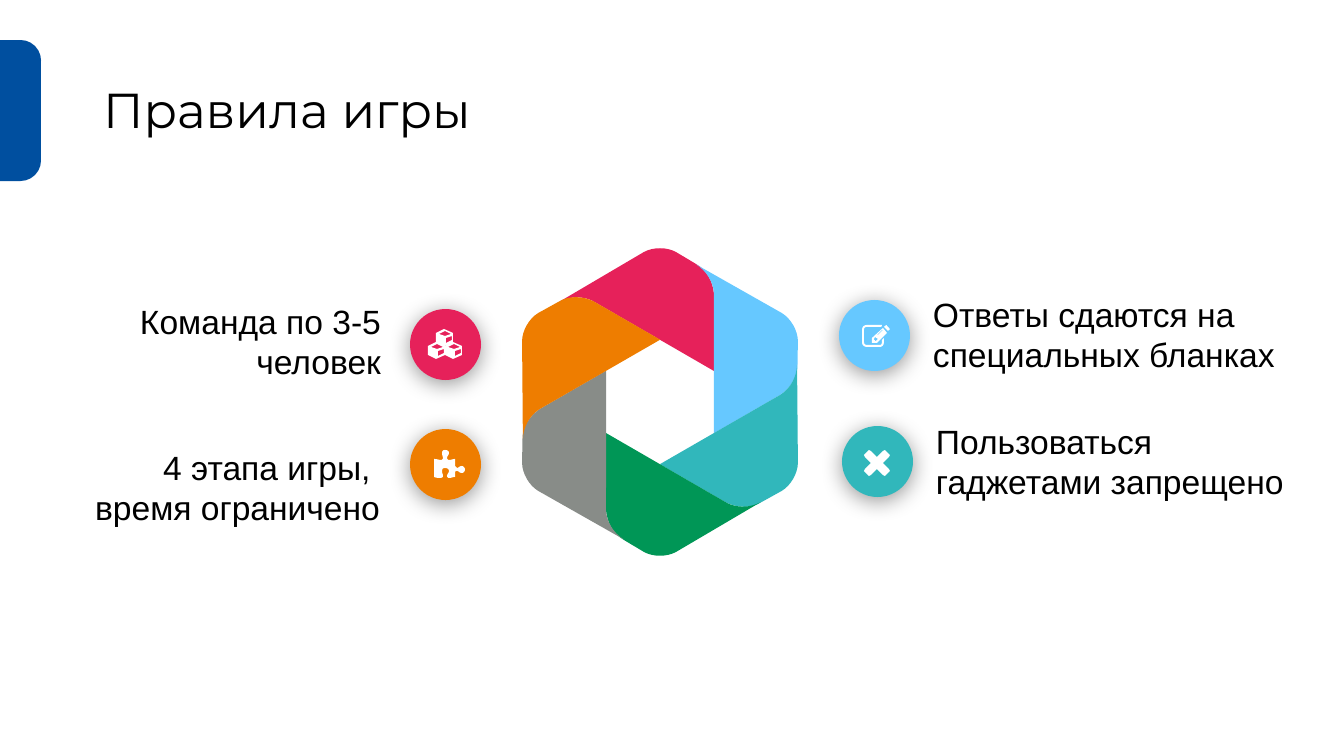
"""Builds the game rules slide: a hexagon of six blades between four rules with icons."""
from math import cos, radians, sin

from lxml import etree
from pptx import Presentation
from pptx.dml.color import RGBColor
from pptx.enum.shapes import MSO_SHAPE as Preset
from pptx.enum.text import MSO_ANCHOR as Anchor, MSO_AUTO_SIZE as AutoSize, PP_ALIGN as Align
from pptx.oxml import parse_xml
from pptx.oxml.ns import nsdecls
from pptx.util import Pt

PX = 9071
THEME = {
    "black": "000000", "white": "FFFFFF", "blue": "004F9F",
    "pink": "E6215A", "sky": "66C8FF", "teal": "31B7BB",
    "green": "009656", "gray": "888C88", "orange": "EE7D00",
    "title_font": "Montserrat", "body_font": "Arial",
    "title_size": 35, "body_size": 24,
}


def paint(shape, color):
    """Gives a shape a plain fill without line or shadow."""
    shape.shadow.inherit = False
    shape.fill.solid()
    shape.fill.fore_color.rgb = RGBColor.from_string(THEME[color])
    shape.line.fill.background()


def draw_outline(shapes, contours, color):
    """Draws contours whose steps are points (2 numbers) or Bezier curves (6 numbers)."""
    builder = None
    for start, *steps in contours:
        points = [start]
        for step in steps:
            if len(step) == 2:
                points.append(step)
                continue
            nodes = [points[-1], step[:2], step[2:4], step[4:]]
            for t in [n / 8 for n in range(1, 9)]:
                weights = [(1 - t) ** 3, 3 * t * (1 - t) ** 2, 3 * t * t * (1 - t), t ** 3]
                points.append(tuple(sum(w * node[axis] for w, node in zip(weights, nodes))
                                    for axis in (0, 1)))
        points = [(round(x * PX), round(y * PX)) for x, y in points]
        if builder is None:
            builder = shapes.build_freeform(*points[0], scale=1.0)
        else:
            builder.move_to(*points[0])
        builder.add_line_segments(points[1:], close=True)
    paint(builder.convert_to_shape(), color)


presentation = Presentation()
presentation.slide_width, presentation.slide_height = 1344 * PX, 756 * PX
slide = presentation.slides.add_slide(presentation.slide_layouts[5])

accent_bar = slide.shapes.add_shape(Preset.ROUND_2_SAME_RECTANGLE, -50 * PX, 90 * PX, 141 * PX, 41 * PX)
accent_bar.adjustments[0] = 0.5
accent_bar.adjustments[1] = 0
accent_bar.rotation = 90
paint(accent_bar, "blue")

title = slide.shapes.title
title.left, title.top, title.width, title.height = 93 * PX, 40 * PX, 1159 * PX, 146 * PX
title.text_frame.text = "Правила игры"
title.text_frame.vertical_anchor = Anchor.MIDDLE
title.text_frame.auto_size = AutoSize.NONE
heading = title.text_frame.paragraphs[0]
heading.alignment = Align.LEFT
heading.line_spacing = 0.9
heading.runs[0].font.name = THEME["title_font"]
heading.runs[0].font.size = Pt(THEME["title_size"])
heading.runs[0].font.color.rgb = RGBColor.from_string(THEME["black"])

RULES = [
    ("Команда по 3-5 человек", (7, 301, 374), Align.RIGHT, (410, 309), "pink"),
    ("4 этапа игры, \nвремя ограничено", (55, 447, 325), Align.RIGHT, (410, 429), "orange"),
    ("Ответы сдаются на специальных бланках", (933, 294, 356), Align.LEFT, (839, 300), "sky"),
    ("Пользоваться гаджетами запрещено", (936, 421, 354), Align.LEFT, (842, 426), "teal"),
]
for words, (left, top, width), alignment, (circle_left, circle_top), color in RULES:
    box = slide.shapes.add_textbox(left * PX, top * PX, width * PX, 82 * PX)
    frame = box.text_frame
    frame.word_wrap = True
    frame.auto_size = AutoSize.SHAPE_TO_FIT_TEXT
    frame.margin_left = frame.margin_right = frame.margin_top = frame.margin_bottom = 0
    frame.text = words
    for paragraph in frame.paragraphs:
        paragraph.alignment = alignment
        for run in paragraph.runs:
            run.font.name = THEME["body_font"]
            run.font.size = Pt(THEME["body_size"])
            run.font.color.rgb = RGBColor.from_string(THEME["black"])
    circle = slide.shapes.add_shape(Preset.OVAL, circle_left * PX, circle_top * PX, 71 * PX, 71 * PX)
    paint(circle, color)
    effects = circle.element.spPr.find("{*}effectLst")
    effects.append(parse_xml(
        f'<a:outerShdw {nsdecls("a")} blurRad="{Pt(16)}" dist="{Pt(3)}" dir="5400000" '
        f'algn="t" rotWithShape="0"><a:srgbClr val="{THEME["black"]}">'
        '<a:alpha val="40000"/></a:srgbClr></a:outerShdw>'))

CUBE = [
    [(8, 0), (17, 4), (17, 13), (8, 17), (0, 13), (0, 4)],
    [(3, 5), (9, 2), (15, 5), (9, 7)],
    [(10, 9), (16, 7), (16, 11), (10, 14)],
]
cubes = [[(left + x, top + y) for x, y in face]
         for left, top in [(428, 342), (445, 342), (436, 329)] for face in CUBE]

puzzle = [[
    (462, 473), (459, 473, 459, 471, 457, 471), (455, 471, 455, 472, 455, 473), (455, 477),
    (453, 477, 451, 478, 449, 478), (448, 478, 447, 477, 447, 476),
    (447, 474, 449, 473, 449, 471), (449, 469, 447, 468, 445, 468),
    (443, 468, 442, 469, 442, 471), (442, 473, 443, 475, 443, 475),
    (443, 477), (441, 478), (438, 478, 437, 478, 434, 477), (434, 459),
    (437, 459, 439, 460, 441, 460), (442, 460, 443, 459, 443, 458),
    (443, 457, 442, 455, 442, 453), (442, 451, 443, 450, 445, 450),
    (447, 450, 449, 451, 449, 453), (449, 455, 447, 456, 447, 458),
    (447, 459, 448, 460, 449, 460), (451, 460, 453, 459, 455, 459), (455, 466),
    (456, 467, 457, 468, 457, 468), (459, 468, 459, 466, 462, 466),
    (463, 466, 465, 468, 465, 469), (465, 472, 463, 473, 462, 473),
]]

notepad = [
    [(884, 342), (884, 345, 882, 347, 880, 347), (867, 347), (864, 347, 862, 345, 862, 342),
     (862, 330), (862, 327, 864, 325, 867, 325), (880, 325), (882, 325), (882, 326), (881, 327),
     (867, 327), (865, 327, 864, 328, 864, 330), (864, 342), (864, 344, 865, 345, 867, 345),
     (880, 345), (881, 345, 882, 344, 882, 342), (882, 340), (884, 338)],
    [(887, 333), (877, 343), (872, 343), (872, 338), (883, 328)],
    [(878, 339), (875, 337), (874, 339), (874, 340), (875, 340), (875, 341), (876, 341)],
    [(882, 330), (877, 335), (878, 335), (883, 330)],
    [(888, 331), (884, 327), (885, 326), (886, 325, 887, 325, 887, 326), (889, 328),
     (890, 329, 890, 330, 889, 330)],
]

CROSS_ARM = [(6, 0), (12, 6), (13, 8), (12, 9), (9, 12), (8, 13), (6, 12)]
cross = [[(877 + x * cos(radians(angle)) - y * sin(radians(angle)),
           463 + x * sin(radians(angle)) + y * cos(radians(angle)))
          for angle in range(0, 360, 90) for x, y in CROSS_ARM]]

for icon in (cubes, puzzle, notepad, cross):
    draw_outline(slide.shapes, icon, "white")

BLADE = [
    (54, -108), (53, -120, 47, -132, 36, -138), (16, -150), (7, -155, -7, -155, -16, -150),
    (-101, -100), (-90, -106, -77, -106, -67, -101), (54, -31),
]
hexagon = slide.shapes.add_group_shape()
for number, color in enumerate(["pink", "sky", "teal", "green", "gray", "orange"]):
    cosine, sine = cos(radians(60 * number)), sin(radians(60 * number))
    blade = []
    for step in BLADE:
        turned = []
        for x, y in zip(step[::2], step[1::2]):
            turned += [660 + x * cosine - y * sine, 402 + x * sine + y * cosine]
        blade.append(tuple(turned))
    draw_outline(hexagon.shapes, [blade], color)

presentation.save("out.pptx")
